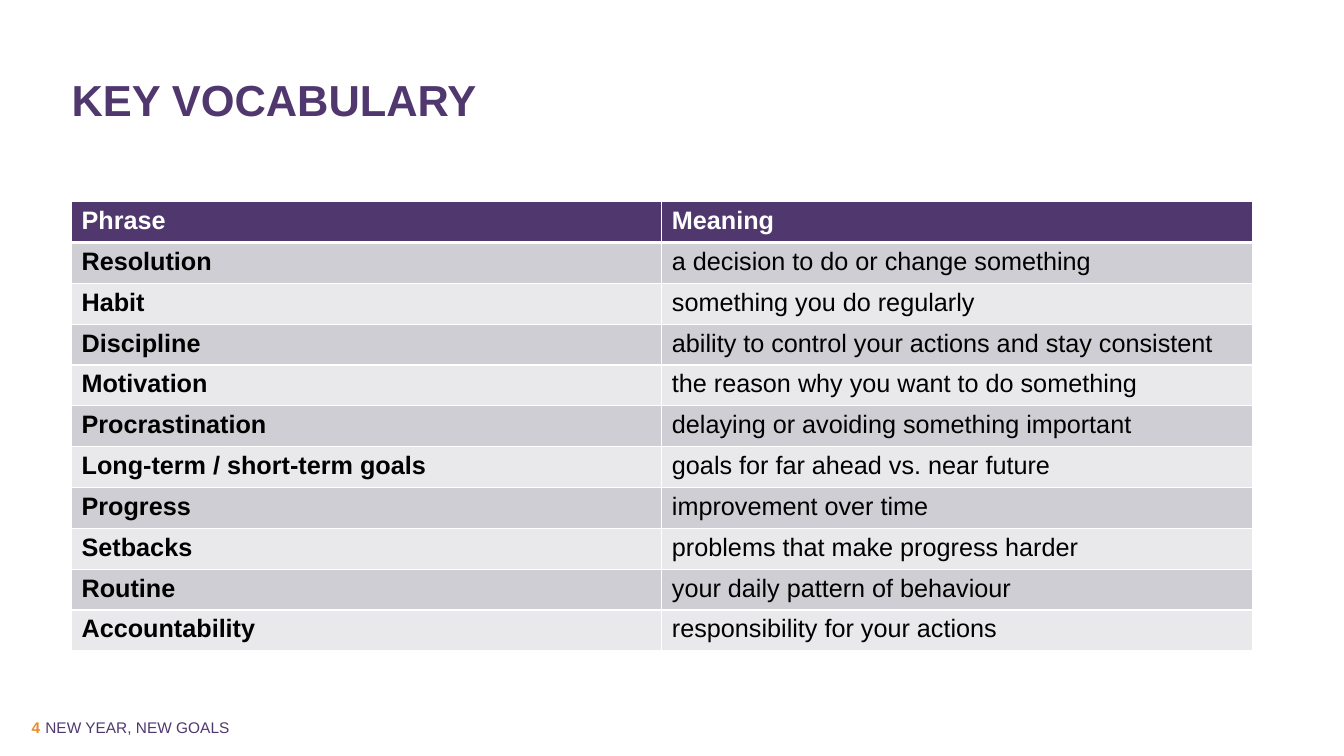
from lxml.etree import SubElement
from pptx import Presentation
from pptx.dml.color import RGBColor
from pptx.enum.text import MSO_ANCHOR, PP_ALIGN
from pptx.oxml.ns import qn
from pptx.util import Inches, Pt

PURPLE, ORANGE, WHITE, BLACK = "50386F", "EA8B2D", "FFFFFF", "000000"
BANDS = ("D0CED5", "E9E8EB")
LEFT, CONTENT_WIDTH = 0.71, 11.71

VOCABULARY = [
    ("Phrase", "Meaning"),
    ("Resolution", "a decision to do or change something"),
    ("Habit", "something you do regularly"),
    ("Discipline", "ability to control your actions and stay consistent"),
    ("Motivation", "the reason why you want to do something"),
    ("Procrastination", "delaying or avoiding something important"),
    ("Long-term / short-term goals", "goals for far ahead vs. near future"),
    ("Progress", "improvement over time"),
    ("Setbacks", "problems that make progress harder"),
    ("Routine", "your daily pattern of behaviour"),
    ("Accountability", "responsibility for your actions"),
]


def rgb(color):
    return RGBColor.from_string(color)


def style(paragraph, size, color, bold=False):
    font = paragraph.font
    font.name, font.size, font.bold = "Arial", Pt(size), bold
    font.color.rgb = rgb(color)


def fit_frame(frame, anchor):
    frame.word_wrap = True
    frame.vertical_anchor = anchor
    frame.margin_left = frame.margin_right = 0
    frame.margin_top = frame.margin_bottom = 0


def add_title(slide, left, top, width, height):
    title = slide.shapes.title
    title.left, title.top = Inches(left), Inches(top)
    title.width, title.height = Inches(width), Inches(height)
    title.text_frame.text = "KEY VOCABULARY"
    fit_frame(title.text_frame, MSO_ANCHOR.TOP)
    heading = title.text_frame.paragraphs[0]
    heading.alignment = PP_ALIGN.LEFT
    heading.line_spacing = 0.9
    style(heading, 31, PURPLE, bold=True)


def set_borders(cell, top, bottom):
    """White cell borders, widths in points."""
    properties = cell._tc.get_or_add_tcPr()
    for side, width in (("L", 1), ("R", 1), ("T", top), ("B", bottom)):
        line = SubElement(properties, qn(f"a:ln{side}"), w=str(Pt(width)))
        fill = SubElement(line, qn("a:solidFill"))
        SubElement(fill, qn("a:srgbClr"), val=WHITE)


def add_vocabulary(slide, left, top, width, height):
    table = slide.shapes.add_table(
        len(VOCABULARY), 2, Inches(left), Inches(top), Inches(width), Inches(height)
    ).table
    for row, entry in enumerate(VOCABULARY):
        header = row == 0
        for column, wording in enumerate(entry):
            cell = table.cell(row, column)
            # The rule under the header is thicker than the others
            set_borders(cell, 3 if row == 1 else 1, 3 if header else 1)
            cell.fill.solid()
            cell.fill.fore_color.rgb = rgb(PURPLE if header else BANDS[(row - 1) % 2])
            cell.text = wording
            style(cell.text_frame.paragraphs[0], 18,
                  WHITE if header else BLACK, bold=header or column == 0)


def add_footer(slide, left, top, width, height):
    # Page number, then the lesson name
    number_width, gap = 0.3, 0.05
    name_left = left + number_width + gap
    parts = [
        ("4", left, number_width, PP_ALIGN.RIGHT, ORANGE, True),
        ("NEW YEAR, NEW GOALS", name_left, left + width - name_left,
         PP_ALIGN.LEFT, PURPLE, False),
    ]
    for wording, part_left, part_width, alignment, color, bold in parts:
        frame = slide.shapes.add_textbox(
            Inches(part_left), Inches(top), Inches(part_width), Inches(height)
        ).text_frame
        fit_frame(frame, MSO_ANCHOR.MIDDLE)
        frame.text = wording
        frame.paragraphs[0].alignment = alignment
        style(frame.paragraphs[0], 11, color, bold)


def main():
    deck = Presentation()
    deck.slide_width, deck.slide_height = Inches(13.33), Inches(7.5)
    slide = deck.slides.add_slide(deck.slide_layouts[5])
    slide.background.fill.solid()
    slide.background.fill.fore_color.rgb = rgb(WHITE)
    add_title(slide, LEFT, 0.78, CONTENT_WIDTH, 0.95)
    add_vocabulary(slide, LEFT, 2, CONTENT_WIDTH, 4.46)
    add_footer(slide, 0.1, 7.02, 12.32, 0.4)
    deck.save("out.pptx")


if __name__ == "__main__":
    main()
